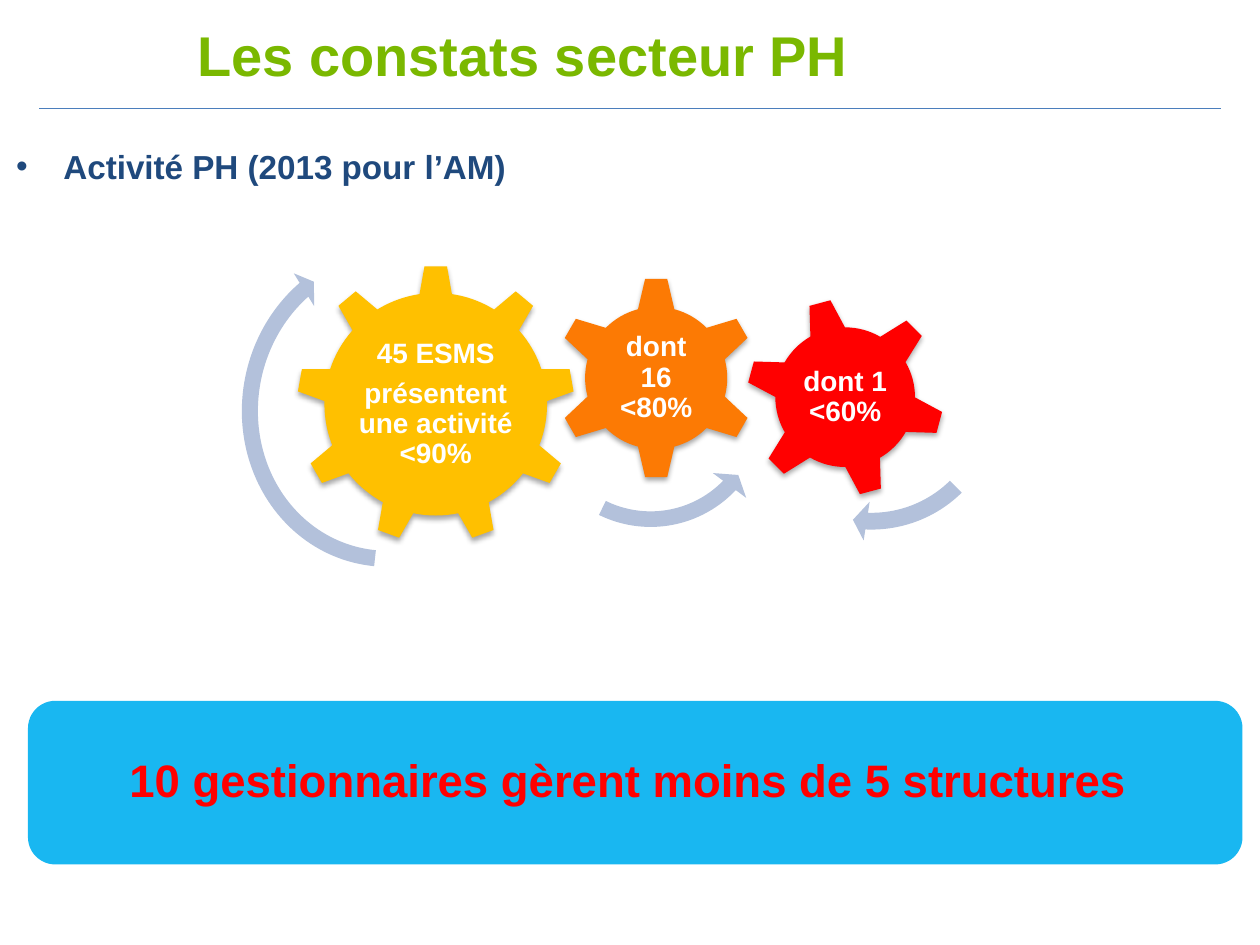
from lxml import etree
from pptx import Presentation
from pptx.dml.color import RGBColor
from pptx.enum.shapes import MSO_CONNECTOR, MSO_SHAPE
from pptx.enum.text import MSO_ANCHOR, MSO_AUTO_SIZE, PP_ALIGN
from pptx.oxml.ns import qn
from pptx.util import Pt

GREEN = RGBColor(0x7A, 0xB8, 0x00)
NAVY = RGBColor(0x1F, 0x49, 0x7D)
RULE_BLUE = RGBColor(0x4B, 0x7E, 0xBC)
SKY = RGBColor(0x00, 0xB0, 0xF0)
RED = RGBColor(0xFF, 0x00, 0x00)
AMBER = RGBColor(0xFF, 0xC0, 0x00)
ORANGE = RGBColor(0xFC, 0x7A, 0x04)
PALE_BLUE = RGBColor(0xB3, 0xC1, 0xDB)
BLACK = RGBColor(0x00, 0x00, 0x00)
WHITE = RGBColor(0xFF, 0xFF, 0xFF)

ROUNDED = MSO_SHAPE.ROUNDED_RECTANGLE
GEAR_6, GEAR_9 = MSO_SHAPE.GEAR_6, MSO_SHAPE.GEAR_9
CLOCKWISE = MSO_SHAPE.CIRCULAR_ARROW
COUNTERCLOCKWISE = MSO_SHAPE.LEFT_CIRCULAR_ARROW
STRAIGHT = MSO_CONNECTOR.STRAIGHT
MIDDLE, TOP = MSO_ANCHOR.MIDDLE, MSO_ANCHOR.TOP
LEFT, CENTER = PP_ALIGN.LEFT, PP_ALIGN.CENTER
NO_AUTOFIT = MSO_AUTO_SIZE.NONE

# Kind, colour, left, top, size, rotation, text inset (x, y), paragraphs
GEARS = [
    (GEAR_9, AMBER, 37.5, 17.5, 159, 0, (32, 38),
     ["45 ESMS", "présentent une activité <90%"]),
    (GEAR_6, ORANGE, 185, 24, 116, 0, (29, 29), ["dont 16 <80%"]),
    (GEAR_6, RED, 294, 36, 114, 345, (25, 25), ["dont 1 <60%"]),
]
# Kind, left, top, width, height, rotation, adjustments
ARROWS = [
    (CLOCKWISE, 0, 0, 183.5, 196.5, 191.4, (0.05, 2.99, 25.03, 158.91, 0.06)),
    (COUNTERCLOCKWISE, 165.5, 26, 148.5, 148.5, 228.9,
     (0.06, 4.3, 104.89, 148.38, 0.08)),
    (CLOCKWISE, 286, 15, 160, 160, 230.4, (0.06, 3.94, 133.14, 105.08, 0.07)),
]


def write(frame, paragraphs, size, color, align, anchor=MIDDLE, spacing=None):
    frame.word_wrap = True
    frame.auto_size = NO_AUTOFIT
    frame.vertical_anchor = anchor
    for index, wording in enumerate(paragraphs):
        paragraph = frame.add_paragraph() if index else frame.paragraphs[0]
        paragraph.alignment = align
        paragraph.line_spacing = spacing
        paragraph.space_before = Pt(0)
        if index < len(paragraphs) - 1:
            paragraph.space_after = Pt(5.6)
        run = paragraph.add_run()
        run.text = wording
        run.font.name = "Arial"
        run.font.size = Pt(size)
        run.font.bold = True
        run.font.color.rgb = color


def place(shape, left, top, width, height):
    shape.left, shape.top = Pt(left), Pt(top)
    shape.width, shape.height = Pt(width), Pt(height)


def add_filled(slide, kind, left, top, width, height, color):
    shape = slide.shapes.add_shape(kind, Pt(left), Pt(top), Pt(width), Pt(height))
    shape.shadow.inherit = False
    shape.fill.solid()
    shape.fill.fore_color.rgb = color
    shape.line.fill.background()
    return shape


def set_alpha(color_parent, percent):
    color = color_parent.find(qn("a:srgbClr"))
    etree.SubElement(color, qn("a:alpha"), val=str(percent * 1000))


def add_soft_shadow(shape):
    effects = shape._element.spPr.find(qn("a:effectLst"))
    shadow = etree.SubElement(
        effects, qn("a:outerShdw"), blurRad=str(Pt(3.1)), dist=str(Pt(1.8)),
        dir="5400000", rotWithShape="0")
    etree.SubElement(shadow, qn("a:srgbClr"), val=str(BLACK))
    set_alpha(shadow, 35)


def add_heading(slide, left, top, width, height):
    """Title, with a rule underneath."""
    title = slide.shapes.title
    place(title, left + 83, top, width - 72, height)
    write(title.text_frame, ["Les constats secteur PH"], 32, GREEN, LEFT)
    rule_y = Pt(top + height + 16.5)
    rule = slide.shapes.add_connector(
        STRAIGHT, Pt(left), rule_y, Pt(left + width), rule_y)
    rule.line.color.rgb = RULE_BLUE
    rule.line.width = Pt(0.75)
    etree.SubElement(rule._element.spPr, qn("a:effectLst"))


def add_topic(slide, left, top, width, height):
    topic = slide.placeholders[1]
    place(topic, left, top, width, height)
    write(topic.text_frame, ["Activité PH (2013 pour l’AM)"], 19, NAVY, LEFT, TOP)
    properties = topic.text_frame.paragraphs[0]._p.get_or_add_pPr()
    properties.set("marL", str(Pt(27)))
    properties.set("indent", str(-Pt(27)))


def add_banner(slide, left, top, width, height):
    banner = add_filled(slide, ROUNDED, left, top, width, height, SKY)
    set_alpha(banner._element.spPr.find(qn("a:solidFill")), 90)
    frame = banner.text_frame
    frame.margin_left, frame.margin_right = Pt(8), Pt(16)
    write(frame, ["10 gestionnaires gèrent moins de 5 structures"], 26, RED,
          CENTER, spacing=0.9)


def add_gear(slide, left, top, size, kind, color, rotation, inset, paragraphs):
    gear = add_filled(slide, kind, left, top, size, size, color)
    gear.rotation = rotation
    add_soft_shadow(gear)
    inset_x, inset_y = inset
    label = slide.shapes.add_textbox(
        Pt(left + inset_x), Pt(top + inset_y),
        Pt(size - 2 * inset_x), Pt(size - 2 * inset_y))
    frame = label.text_frame
    frame.margin_left = frame.margin_right = Pt(1.5)
    frame.margin_top = frame.margin_bottom = Pt(1.5)
    write(frame, paragraphs, 16, WHITE, CENTER, spacing=0.9)


def add_gear_train(slide, left, top):
    for kind, color, x, y, size, rotation, inset, paragraphs in GEARS:
        add_gear(slide, left + x, top + y, size, kind, color, rotation, inset,
                 paragraphs)
    for kind, x, y, width, height, rotation, adjustments in ARROWS:
        arrow = add_filled(slide, kind, left + x, top + y, width, height, PALE_BLUE)
        arrow.rotation = rotation
        for index, value in enumerate(adjustments):
            arrow.adjustments[index] = value


def main():
    deck = Presentation()
    deck.slide_width, deck.slide_height = Pt(720), Pt(540)
    slide = deck.slides.add_slide(deck.slide_layouts[1])
    add_heading(slide, 22.5, 16.5, 675, 29)
    add_topic(slide, 2, 80, 298, 37)
    add_banner(slide, 16, 400.5, 694, 93.5)
    add_gear_train(slide, 132, 134)
    deck.save("out.pptx")


if __name__ == "__main__":
    main()
